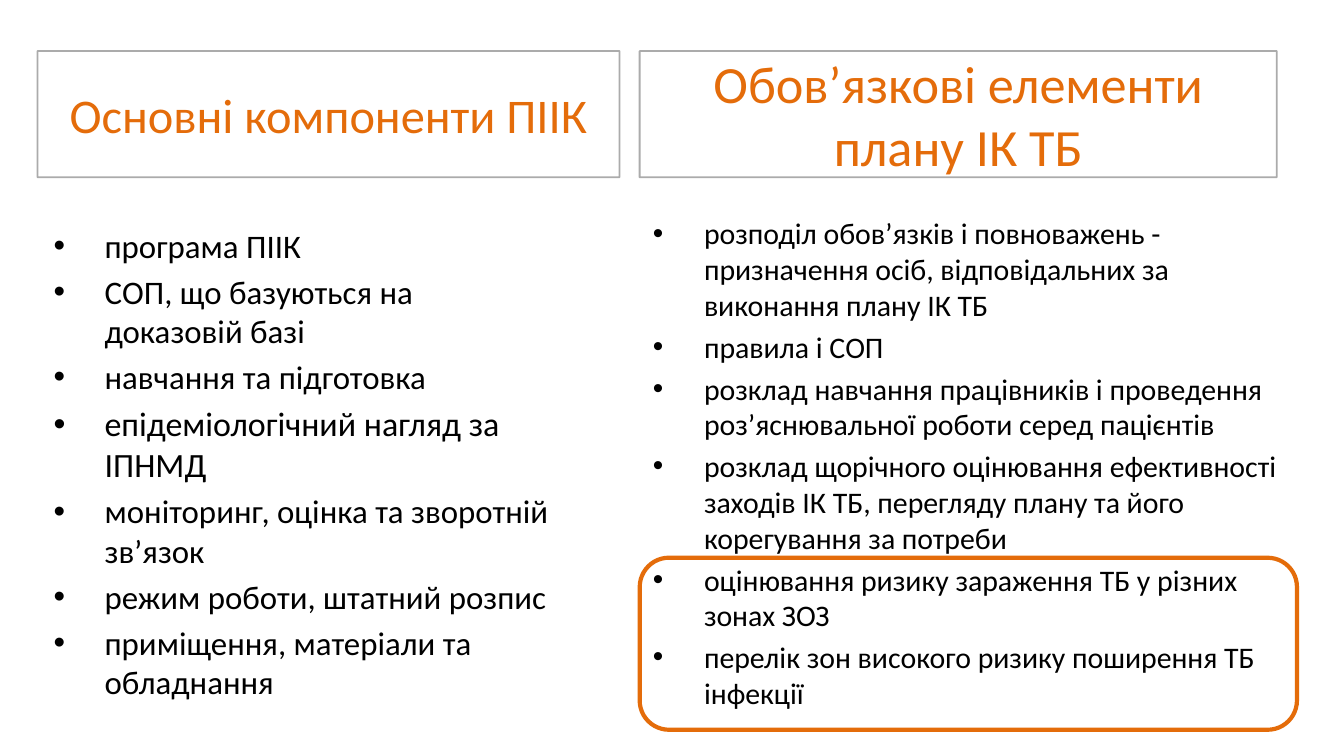
"""Build a slide comparing infection control programme components with TB plan elements."""
from pptx import Presentation
from pptx.dml.color import RGBColor
from pptx.enum.shapes import MSO_SHAPE as SHAPE
from pptx.enum.text import MSO_ANCHOR as ANCHOR, PP_ALIGN as ALIGN
from pptx.oxml.ns import qn
from pptx.util import Inches, Pt
from lxml import etree

SLIDE_WIDTH = 10
SLIDE_HEIGHT = SLIDE_WIDTH * 9 / 16
ORANGE, BLACK, GREY = "E46C0A", "000000", "595959"
FONT, INDENT = "Calibri", 0.38
HEADER_TOP, HEADER_HEIGHT = 0.38, 0.94
RISK_FRAME = (4.76, 4.15, 4.89, 1.28)

HEADERS = [
    ("Основні компоненти ПІІК", 0.28, 4.33, 25.9),
    ("Обов’язкові елементи плану ІК ТБ", 4.76, 4.74, 28),
]
COLUMNS = [
    ((0.3, 1.63, 3.95, 3.44), 0.13, 17.6, [
        "програма ПІІК",
        "СОП, що базуються на доказовій базі",
        "навчання та підготовка",
        ("епідеміологічний нагляд за ІПНМД", 18.2),
        "моніторинг, оцінка та зворотній зв’язок",
        "режим роботи, штатний розпис",
        "приміщення, матеріали та обладнання",
    ]),
    ((4.76, 1.55, 4.89, 3.88), 0.1, 16, [
        "розподіл обов’язків і повноважень - призначення осіб, "
        "відповідальних за виконання плану ІК ТБ",
        "правила і СОП",
        "розклад навчання працівників і проведення "
        "роз’яснювальної роботи серед пацієнтів",
        "розклад щорічного оцінювання ефективності заходів ІК ТБ, "
        "перегляду плану та його корегування за потреби",
        "оцінювання ризику зараження ТБ у різних зонах ЗОЗ",
        "перелік зон високого ризику поширення ТБ інфекції",
    ]),
]


def rgb(value):
    return RGBColor.from_string(value)


def style(p, size, color):
    for r in p.runs:
        r.font.name, r.font.size = FONT, Pt(size)
        r.font.color.rgb = rgb(color)


def outline(s, kind, box, color, width):
    sp = s.shapes.add_shape(kind, *map(Inches, box))
    sp.shadow.inherit = False
    sp.fill.background()
    sp.line.color.rgb, sp.line.width = rgb(color), Pt(width)
    return sp


def add_header(s, text, left, width, size):
    box = (left, HEADER_TOP, width, HEADER_HEIGHT)
    sp = outline(s, SHAPE.RECTANGLE, box, GREY, 1)
    line_color = next(sp.line._ln.iter(qn("a:srgbClr")))
    etree.SubElement(line_color, qn("a:alpha"), val="50000")
    tf = sp.text_frame
    tf.word_wrap, tf.vertical_anchor = True, ANCHOR.MIDDLE
    tf.text = text
    p = tf.paragraphs[0]
    p.alignment = ALIGN.CENTER
    style(p, size, ORANGE)


def add_bullets(s, box, right_margin, size, items):
    tf = s.shapes.add_textbox(*map(Inches, box)).text_frame
    tf.word_wrap, tf.margin_right = True, Inches(right_margin)
    for i, item in enumerate(items):
        text, pt = item if isinstance(item, tuple) else (item, size)
        p = tf.add_paragraph() if i else tf.paragraphs[0]
        p.text = text
        p.space_before = Pt(round(pt * 0.2, 1))
        style(p, pt, BLACK)
        pPr = p._p.get_or_add_pPr()
        pPr.set("marL", str(Inches(INDENT)))
        pPr.set("indent", str(-Inches(INDENT)))
        etree.SubElement(pPr, qn("a:buFont"), typeface="Arial")
        etree.SubElement(pPr, qn("a:buChar"), char="•")


def main():
    prs = Presentation()
    prs.slide_width, prs.slide_height = Inches(SLIDE_WIDTH), Inches(SLIDE_HEIGHT)
    s = prs.slides.add_slide(prs.slide_layouts[6])
    frame = outline(s, SHAPE.ROUNDED_RECTANGLE, RISK_FRAME, ORANGE, 2.25)
    frame.adjustments[0] = 0.17
    for header, column in zip(HEADERS, COLUMNS):
        add_bullets(s, *column)
        add_header(s, *header)
    prs.save("out.pptx")


if __name__ == "__main__":
    main()
